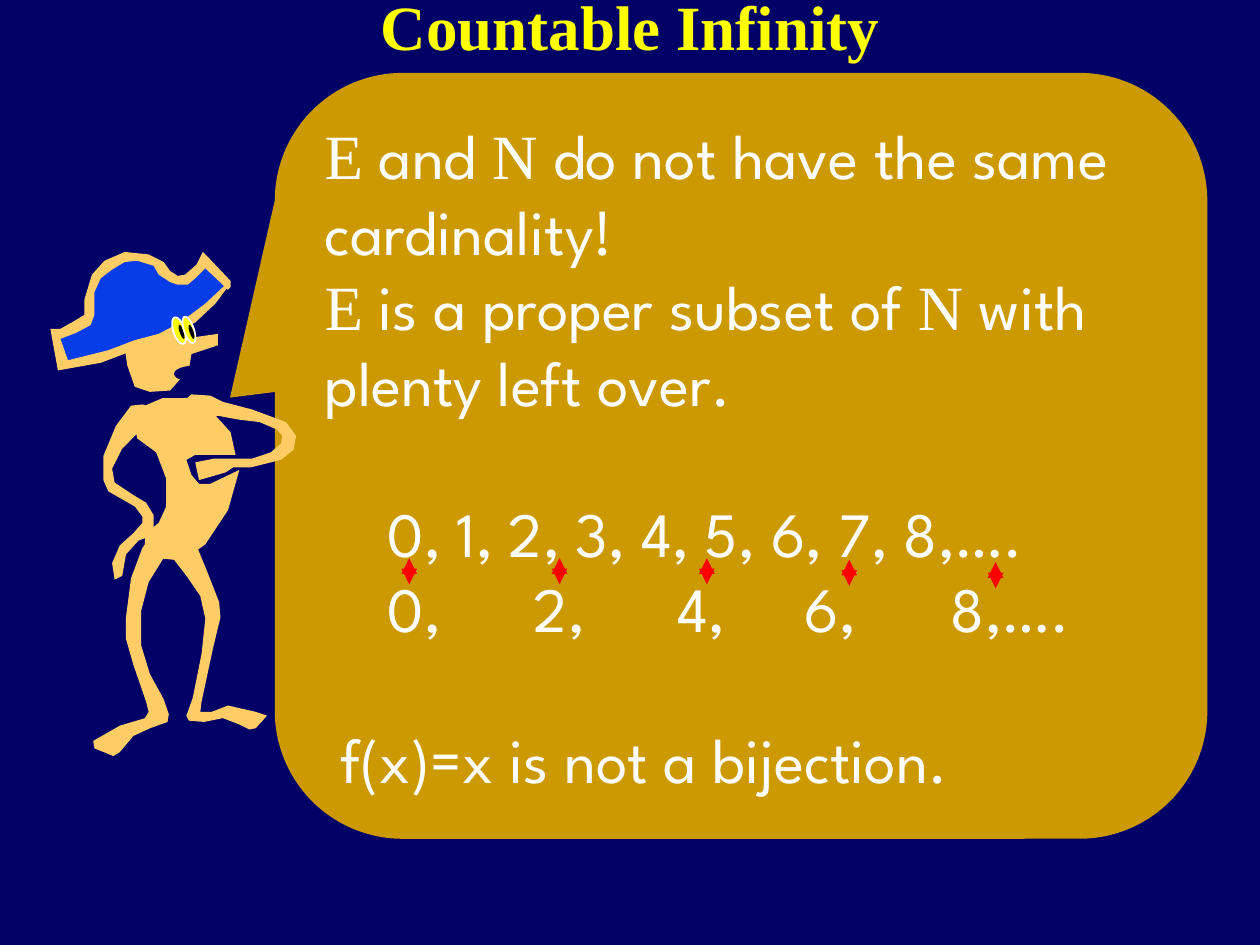
from lxml import etree
from pptx import Presentation
from pptx.dml.color import RGBColor
from pptx.enum.shapes import MSO_CONNECTOR, MSO_SHAPE
from pptx.enum.text import MSO_ANCHOR, PP_ALIGN
from pptx.oxml.ns import qn
from pptx.util import Cm, Pt

STRAIGHT = MSO_CONNECTOR.STRAIGHT
CALLOUT = MSO_SHAPE.ROUNDED_RECTANGULAR_CALLOUT
OVAL = MSO_SHAPE.OVAL
TOP, MIDDLE = MSO_ANCHOR.TOP, MSO_ANCHOR.MIDDLE
LEFT, CENTER = PP_ALIGN.LEFT, PP_ALIGN.CENTER
SERIF, SANS = "Times New Roman", "League Spartan"
NAVY, GOLD, SKIN, BLUE = "000066", "CC9900", "FFCC66", "063DE8"
YELLOW, WHITE, BLACK, RED = "FFFF00", "FFFFFF", "000000", "FF0000"


def rgb(value):
    return RGBColor.from_string(value)


def paint(sp, fill, line=None):
    sp.shadow.inherit = False
    sp.fill.solid()
    sp.fill.fore_color.rgb = rgb(fill)
    if line:
        sp.line.color.rgb = rgb(line)
        sp.line.width = Pt(1)
    else:
        sp.line.fill.background()


prs = Presentation()
prs.slide_width, prs.slide_height = Cm(25.4), Cm(19.05)
s = prs.slides.add_slide(prs.slide_layouts[6])
s.background.fill.solid()
s.background.fill.fore_color.rgb = rgb(NAVY)

bubble = s.shapes.add_shape(CALLOUT, Cm(5.54), Cm(1.47), Cm(18.8), Cm(15.44))
for i, value in enumerate((-0.548, -0.076, 0.167)):
    bubble.adjustments[i] = value
paint(bubble, GOLD)
tf = bubble.text_frame
tf.word_wrap = True
tf.vertical_anchor = TOP
p = tf.paragraphs[0]
for text, font in (
    ("E ", SERIF), ("and ", SANS), ("N", SERIF),
    (" do not have the same cardinality! ", SANS), ("\v", SANS),
    ("E", SERIF), (" is a proper subset of ", SANS), ("N", SERIF),
    (" with plenty left over.", SANS),
):
    if text == "\v":
        p.add_line_break()
        continue
    r = p.add_run()
    r.text = text
    r.font.name = font

numbers = tf.add_paragraph()
numbers.text = "\t0, 1, 2, 3, 4, 5, 6, 7, 8,….\v\t0,\t2,\t4,\t6,\t8,…."
formula = tf.add_paragraph()
formula.text = "f(x)=x is not a bijection."
for p in tf.paragraphs:
    p.alignment = LEFT
    p.font.size = Pt(36)
    p.font.color.rgb = rgb(WHITE)
for p in (numbers, formula):
    p.font.name = SANS
    p.space_before = Pt(43)
formula._p.get_or_add_pPr().set("marL", str(Cm(0.32)))
tabs = etree.Element(qn("a:tabLst"))
for stop in (1.27, 4.22, 7.11, 9.68, 12.62):
    etree.SubElement(tabs, qn("a:tab"), pos=str(Cm(stop)), algn="l")
numbers._p.pPr.find(qn("a:defRPr")).addprevious(tabs)

head = [(152, 268), (146, 244), (130, 236), (115, 236), (106, 244), (98, 269),
        (101, 290), (107, 307), (119, 311), (135, 310), (150, 293), (152, 281),
        (173, 274), (173, 265)]
torso = [(183, 343), (163, 321), (151, 316), (129, 316), (108, 325), (106, 335),
         (109, 348), (124, 359), (132, 380), (132, 402), (126, 415), (115, 424),
         (115, 435), (120, 440), (126, 443), (145, 445), (163, 432), (181, 405),
         (190, 373), (167, 384), (158, 384), (152, 377), (148, 365), (155, 361),
         (181, 361), (187, 361)]
left_arm = [(127, 332), (122, 324), (113, 321), (104, 322), (92, 338), (82, 362),
            (82, 381), (86, 390), (107, 402), (113, 410), (113, 415), (106, 423),
            (95, 433), (89, 447), (91, 460), (97, 457), (100, 440), (110, 429),
            (118, 426), (122, 421), (122, 409), (116, 399), (106, 393), (91, 383),
            (89, 372), (97, 356), (110, 343)]
right_arm = [(167, 314), (152, 313), (146, 318), (150, 326), (162, 330), (173, 330),
             (189, 333), (206, 335), (220, 341), (224, 346), (223, 352), (215, 359),
             (200, 364), (183, 364), (170, 364), (155, 367), (158, 381), (179, 375),
             (185, 371), (199, 371), (223, 365), (233, 357), (235, 346), (227, 335),
             (200, 325), (177, 319)]
left_leg = [(138, 419), (122, 422), (113, 435), (104, 459), (100, 490), (100, 507),
            (106, 528), (116, 557), (118, 565), (115, 570), (95, 576), (74, 588),
            (75, 594), (90, 600), (95, 597), (106, 584), (119, 578), (133, 573),
            (134, 567), (130, 555), (119, 535), (112, 512), (112, 485), (118, 462),
            (131, 441), (136, 429)]
right_leg = [(141, 419), (137, 423), (135, 433), (138, 444), (148, 457), (159, 473),
             (163, 491), (160, 519), (153, 554), (148, 568), (150, 572), (162, 573),
             (177, 570), (190, 575), (198, 579), (203, 578), (212, 568), (203, 565),
             (181, 560), (168, 565), (159, 565), (160, 557), (169, 515), (175, 490),
             (174, 478), (165, 455), (156, 433)]
hat = [(181, 226), (163, 207), (155, 216), (146, 221), (136, 221), (126, 212),
       (115, 205), (101, 204), (87, 210), (77, 218), (73, 229), (72, 243),
       (69, 256), (61, 262), (51, 265), (42, 267), (49, 292), (72, 288),
       (95, 281), (113, 273), (133, 265), (155, 256), (172, 237)]
hat_trim = [(171, 241), (155, 256), (132, 267), (101, 280), (80, 288), (46, 294),
            (40, 261), (48, 261), (57, 256), (67, 250), (67, 238), (73, 218),
            (83, 207), (99, 200), (118, 202), (130, 208), (135, 215), (141, 219),
            (147, 218), (156, 210), (161, 200), (166, 205), (183, 223), (183, 228),
            (181, 230), (163, 213), (155, 221), (149, 226), (141, 226), (135, 224),
            (126, 218), (122, 211), (109, 207), (99, 208), (89, 214), (80, 221),
            (75, 232), (75, 240), (75, 250), (72, 258), (61, 264), (48, 269),
            (54, 286), (86, 278), (107, 270), (126, 265), (143, 256), (163, 241),
            (178, 227), (180, 229)]

pirate = s.shapes.add_group_shape()
for points, color in (
    (head, SKIN), (torso, SKIN), (left_arm, SKIN), (right_arm, SKIN),
    (left_leg, SKIN), (right_leg, SKIN), (hat, BLUE), (hat_trim, SKIN),
):
    outline = pirate.shapes.build_freeform(*points[0], scale=Cm(0.0254))
    outline.add_line_segments(points[1:], close=True)
    paint(outline.convert_to_shape(), color)

for x, y, w, h, angle, fill, line in (
    (3.33, 6.55, 0.56, 0.23, 71.4, YELLOW, WHITE),
    (3.51, 6.65, 0.3, 0.08, 71.4, BLACK, None),
    (3.53, 6.55, 0.56, 0.2, 71.4, YELLOW, WHITE),
    (3.71, 6.65, 0.3, 0.08, 71.4, BLACK, None),
    (3.51, 7.37, 0.84, 0.33, 0, NAVY, None),
):
    sp = pirate.shapes.add_shape(OVAL, Cm(x), Cm(y), Cm(w), Cm(h))
    sp.rotation = angle
    paint(sp, fill, line)

title = s.shapes.add_textbox(Cm(1.9), Cm(-1.07), Cm(21.6), Cm(3.18))
tf = title.text_frame
tf.word_wrap = True
tf.vertical_anchor = MIDDLE
p = tf.paragraphs[0]
p.text = "Countable Infinity"
p.alignment = CENTER
p.font.name = SERIF
p.font.size = Pt(36)
p.font.bold = True
p.font.color.rgb = rgb(YELLOW)

for x, y in ((8.25, 11.25), (11.28, 11.25), (14.25, 11.25), (17.12, 11.28), (20.07, 11.33)):
    arrow = s.shapes.add_connector(STRAIGHT, Cm(x), Cm(y), Cm(x), Cm(y + 0.53))
    arrow.line.color.rgb = rgb(RED)
    arrow.line.width = Pt(3)
    ln = arrow.line._get_or_add_ln()
    for end in ("a:headEnd", "a:tailEnd"):
        etree.SubElement(ln, qn(end), type="triangle")
    etree.SubElement(arrow._element.spPr, qn("a:effectLst"))

prs.save("out.pptx")
